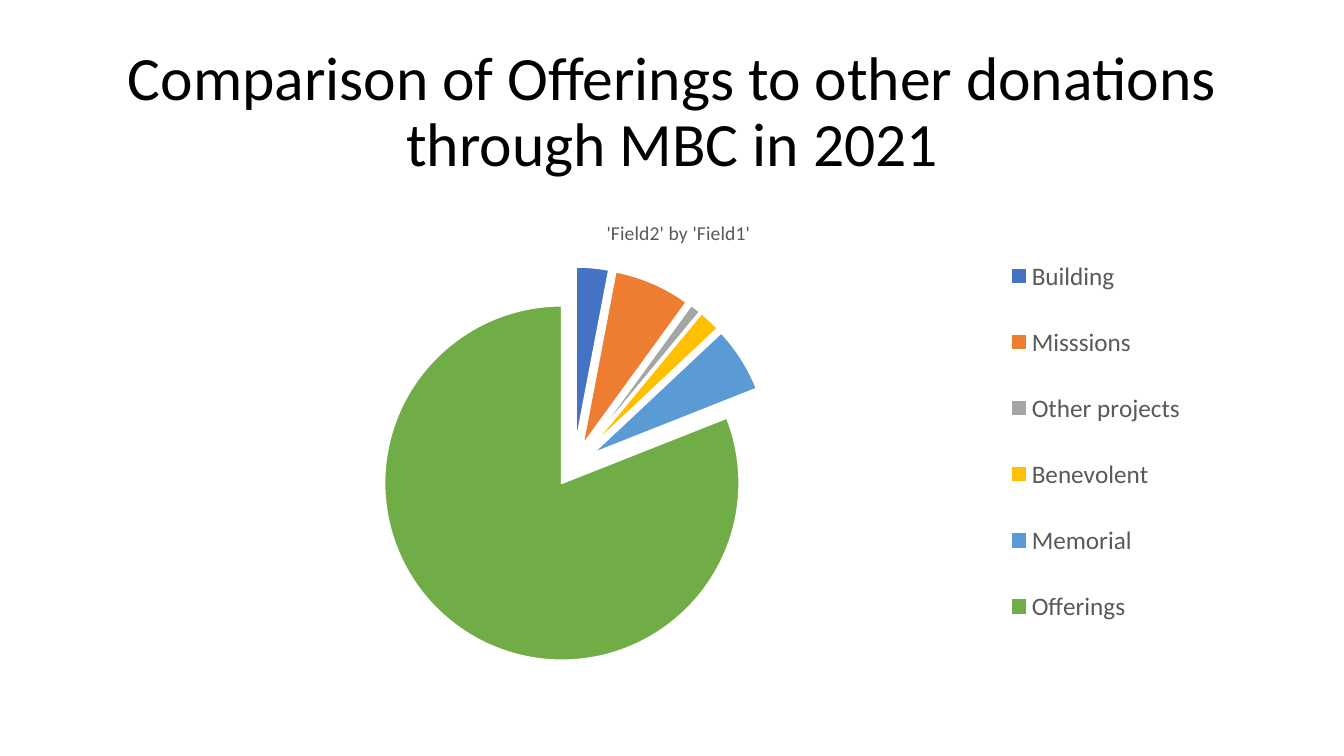
from lxml import etree
from pptx import Presentation
from pptx.chart.data import CategoryChartData
from pptx.dml.color import RGBColor
from pptx.enum.chart import XL_CHART_TYPE, XL_LEGEND_POSITION
from pptx.enum.text import MSO_ANCHOR, PP_ALIGN
from pptx.oxml.ns import qn
from pptx.util import Inches, Pt

PIE = XL_CHART_TYPE.PIE
LEGEND_RIGHT = XL_LEGEND_POSITION.RIGHT
MIDDLE = MSO_ANCHOR.MIDDLE
CENTER = PP_ALIGN.CENTER
FONT = "Calibri"
GREY = "595959"
EXPLOSION = 12

DONATIONS = [
    ("Building", 3, "4472C4"),
    ("Misssions", 7, "ED7D31"),
    ("Other projects", 1, "A5A5A5"),
    ("Benevolent", 2, "FFC000"),
    ("Memorial", 6, "5B9BD5"),
    ("Offerings", 81, "70AD47"),
]


def rgb(hex_color):
    return RGBColor.from_string(hex_color)


def style_font(font, size, color):
    font.name = FONT
    font.size = Pt(size)
    font.bold = False
    font.color.rgb = rgb(color)


def set_layout(part, index, **settings):
    for old_layout in part.findall(qn("c:layout")):
        part.remove(old_layout)
    layout = etree.Element(qn("c:layout"))
    manual = etree.SubElement(layout, qn("c:manualLayout"))
    for tag, value in settings.items():
        etree.SubElement(manual, qn(f"c:{tag}")).set("val", str(value))
    part.insert(index, layout)


def add_heading(slide, left, top, width, height):
    heading = slide.shapes.add_textbox(
        Inches(left), Inches(top), Inches(width), Inches(height))
    frame = heading.text_frame
    frame.word_wrap = True
    frame.vertical_anchor = MIDDLE
    paragraph = frame.paragraphs[0]
    paragraph.alignment = CENTER
    paragraph.line_spacing = 0.9
    run = paragraph.add_run()
    run.text = "Comparison of Offerings to other donations through MBC in 2021"
    style_font(run.font, 44, "000000")


def color_slices(series):
    for index, (_, _, color) in enumerate(DONATIONS):
        slice_format = series.points[index].format
        slice_format.fill.solid()
        slice_format.fill.fore_color.rgb = rgb(color)
        slice_format.line.color.rgb = rgb("FFFFFF")
        slice_format.line.width = Pt(1.5)
    for slice_xml in series._element.findall(qn("c:dPt")):
        explosion = etree.Element(qn("c:explosion"))
        explosion.set("val", str(EXPLOSION))
        slice_xml.find(qn("c:spPr")).addprevious(explosion)


def add_donations_pie(slide, left, top, width, height):
    data = CategoryChartData()
    data.categories = [name for name, _, _ in DONATIONS]
    data.add_series("Series 1", [share for _, share, _ in DONATIONS])
    chart = slide.shapes.add_chart(
        PIE, Inches(left), Inches(top), Inches(width), Inches(height), data).chart
    style_font(chart.font, 10, "000000")

    chart.has_title = True
    caption = chart.chart_title.text_frame.paragraphs[0].add_run()
    caption.text = "'Field2' by 'Field1'"
    style_font(caption.font, 14, GREY)
    chart.chart_title.include_in_layout = False

    chart.has_legend = True
    chart.legend.position = LEGEND_RIGHT
    chart.legend.include_in_layout = False
    style_font(chart.legend.font, 18, GREY)

    pie = chart.plots[0]
    pie.vary_by_categories = True
    color_slices(pie.series[0])

    chart_xml = chart._chartSpace.find(qn("c:chart"))
    set_layout(chart_xml.find(qn("c:title")), 1,
               xMode="edge", yMode="edge", x=0.44, y=0.03)
    set_layout(chart_xml.find(qn("c:plotArea")), 0, layoutTarget="inner",
               xMode="edge", yMode="edge", x=0.26, y=0.18, w=0.31, h=0.74)
    set_layout(chart_xml.find(qn("c:legend")), 1,
               xMode="edge", yMode="edge", x=0.78, y=0.05, w=0.17, h=0.9)


def main():
    presentation = Presentation()
    presentation.slide_width = Inches(13.33)
    presentation.slide_height = Inches(7.5)
    slide = presentation.slides.add_slide(presentation.slide_layouts[6])
    add_heading(slide, 0.92, 0.4, 11.5, 1.45)
    add_donations_pie(slide, 0.92, 2, 11.5, 4.76)
    presentation.save("out.pptx")


if __name__ == "__main__":
    main()
